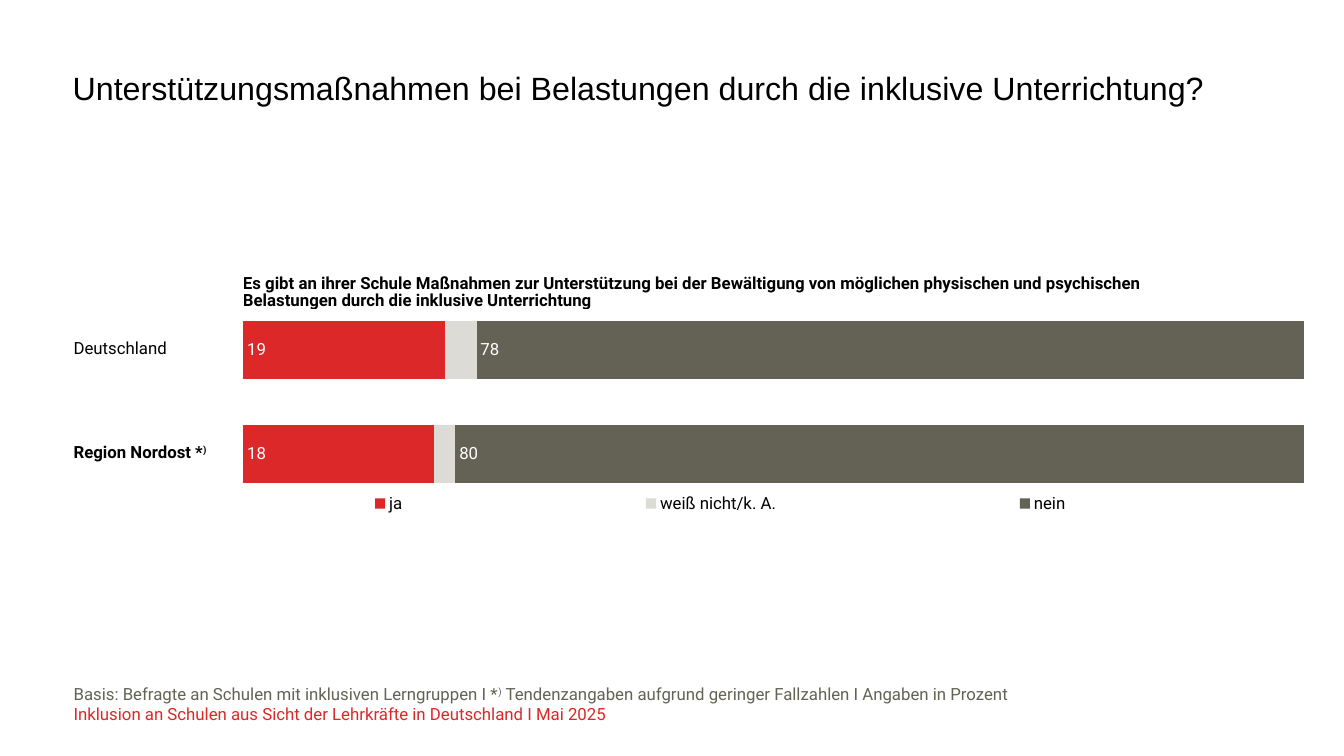
from lxml import etree
from pptx import Presentation
from pptx.chart.data import CategoryChartData
from pptx.dml.color import RGBColor
from pptx.enum.chart import XL_CHART_TYPE, XL_LABEL_POSITION, XL_LEGEND_POSITION
from pptx.enum.text import MSO_ANCHOR, MSO_AUTO_SIZE, PP_ALIGN
from pptx.oxml.ns import qn
from pptx.util import Inches, Pt

STACKED_BAR = XL_CHART_TYPE.BAR_STACKED
INSIDE_BASE = XL_LABEL_POSITION.INSIDE_BASE
LEGEND_BOTTOM = XL_LEGEND_POSITION.BOTTOM
TOP, MIDDLE, BOTTOM = MSO_ANCHOR.TOP, MSO_ANCHOR.MIDDLE, MSO_ANCHOR.BOTTOM
NO_AUTOFIT = MSO_AUTO_SIZE.NONE
LEFT = PP_ALIGN.LEFT

BLACK, WHITE, RED, LIGHT, OLIVE = "000000", "FFFFFF", "DC2828", "DCDBD5", "636255"
TITLE_ONLY = 5

# name, values for Deutschland and Region Nordost, colour, labelled
ANSWERS = [
    ("ja", (19, 18), RED, True),
    ("weiß nicht/k. A.", (3, 2), LIGHT, False),
    ("nein", (78, 80), OLIVE, True),
]


def rgb(value):
    return RGBColor.from_string(value)


def style_font(font, color, size=12, name="Roboto", bold=False):
    font.name = name
    font.size = Pt(size)
    font.bold = bold
    font.color.rgb = rgb(color)


def add_runs(para, texts, color, line_spacing=1.0, **style):
    """Fill a paragraph; a lone closing bracket is raised as a note mark."""
    para.alignment = LEFT
    para.line_spacing = line_spacing
    for text in texts:
        span = para.add_run()
        span.text = text
        style_font(span.font, color, **style)
        if text == ")":
            span.font._element.set("baseline", "30000")


def clear_margins(holder):
    holder.margin_left = holder.margin_right = 0
    holder.margin_top = holder.margin_bottom = 0


def place_title(page, text):
    title = page.shapes.title
    title.left, title.top = Inches(0.72), Inches(0.72)
    title.width, title.height = Inches(12.21), Inches(0.91)
    frame = title.text_frame
    clear_margins(frame)
    frame.word_wrap = True
    frame.auto_size = NO_AUTOFIT
    frame.vertical_anchor = TOP
    add_runs(frame.paragraphs[0], [text], BLACK, 0.9, size=23, name="Arial")


def add_label_table(page, left, top, width, height, rows, anchor, line_spacing=1.0):
    """Add a one-column table; each row is (texts, bold)."""
    table = page.shapes.add_table(
        len(rows), 1, Inches(left), Inches(top), Inches(width), Inches(height)
    ).table
    table.first_row = table.horz_banding = False
    for index, (texts, bold) in enumerate(rows):
        cell = table.cell(index, 0)
        cell.fill.background()
        clear_margins(cell)
        cell.vertical_anchor = anchor
        add_runs(cell.text_frame.paragraphs[0], texts, BLACK, line_spacing, bold=bold)


def make_layout(x, y, width, height, inner=False):
    layout = etree.Element(qn("c:layout"))
    manual = etree.SubElement(layout, qn("c:manualLayout"))
    settings = [("layoutTarget", "inner")] if inner else []
    settings += [("xMode", "edge"), ("yMode", "edge")]
    settings += [("x", x), ("y", y), ("w", width), ("h", height)]
    for tag, value in settings:
        etree.SubElement(manual, qn(f"c:{tag}")).set("val", str(value))
    return layout


def set_plot_layout(chart, layout):
    area = chart._chartSpace.chart.plotArea
    for old in area.findall(qn("c:layout")):
        area.remove(old)
    area.insert(0, layout)


def set_legend(chart, layout):
    chart.has_legend = True
    legend = chart.legend
    legend.position = LEGEND_BOTTOM
    legend.include_in_layout = False
    style_font(legend.font, BLACK)
    element = legend._element
    for old in element.findall(qn("c:layout")):
        element.remove(old)
    element.find(qn("c:legendPos")).addnext(layout)


def add_answer_chart(page):
    data = CategoryChartData()
    data.categories = ["1", "2"]
    for name, values, _, _ in ANSWERS:
        data.add_series(name, values)
    chart = page.shapes.add_chart(
        STACKED_BAR, Inches(1.36), Inches(2.08), Inches(11.57), Inches(4.52), data
    ).chart
    chart.has_title = False
    style_font(chart.font, BLACK)
    chart.category_axis.reverse_order = True
    chart.category_axis.visible = False
    scale = chart.value_axis
    scale.minimum_scale, scale.maximum_scale, scale.major_unit = 0, 100, 20
    scale.has_major_gridlines = False
    scale.visible = False

    plot = chart.plots[0]
    plot.gap_width, plot.overlap = 80, 100
    plot.vary_by_categories = False
    for series, (_, _, color, labelled) in zip(plot.series, ANSWERS):
        series.format.fill.solid()
        series.format.fill.fore_color.rgb = rgb(color)
        if labelled:
            labels = series.data_labels
            labels.show_value = True
            labels.position = INSIDE_BASE
            style_font(labels.font, WHITE)
    set_plot_layout(chart, make_layout(0.091, 0.194, 0.909, 0.456, inner=True))
    set_legend(chart, make_layout(0, 0.61, 1, 0.07))


def add_footer(page):
    box = page.shapes.add_textbox(Inches(0.73), Inches(6.81), Inches(11.09), Inches(0.42))
    frame = box.text_frame
    clear_margins(frame)
    frame.word_wrap = True
    basis = [
        "Basis: Befragte an Schulen mit inklusiven Lerngruppen I *",
        ")",
        " Tendenzangaben aufgrund geringer Fallzahlen I Angaben in Prozent",
    ]
    study = ["Inklusion an Schulen aus Sicht der Lehrkräfte in Deutschland I Mai 2025"]
    add_runs(frame.paragraphs[0], basis, OLIVE, 0.85)
    add_runs(frame.add_paragraph(), study, RED)


def main():
    deck = Presentation()
    deck.slide_width, deck.slide_height = Inches(13.33), Inches(7.5)
    page = deck.slides.add_slide(deck.slide_layouts[TITLE_ONLY])
    add_answer_chart(page)
    place_title(
        page, "Unterstützungsmaßnahmen bei Belastungen durch die inklusive Unterrichtung?"
    )
    add_footer(page)
    statement = (
        "Es gibt an ihrer Schule Maßnahmen zur Unterstützung bei der Bewältigung von "
        "möglichen physischen und psychischen Belastungen durch die inklusive Unterrichtung"
    )
    add_label_table(page, 2.41, 2.73, 9.25, 0.34, [([statement], True)], BOTTOM, 0.85)
    regions = [(["Deutschland"], False), (["Region Nordost *", ")"], True)]
    add_label_table(page, 0.73, 2.94, 1.41, 2.07, regions, MIDDLE)
    deck.save("out.pptx")


if __name__ == "__main__":
    main()
